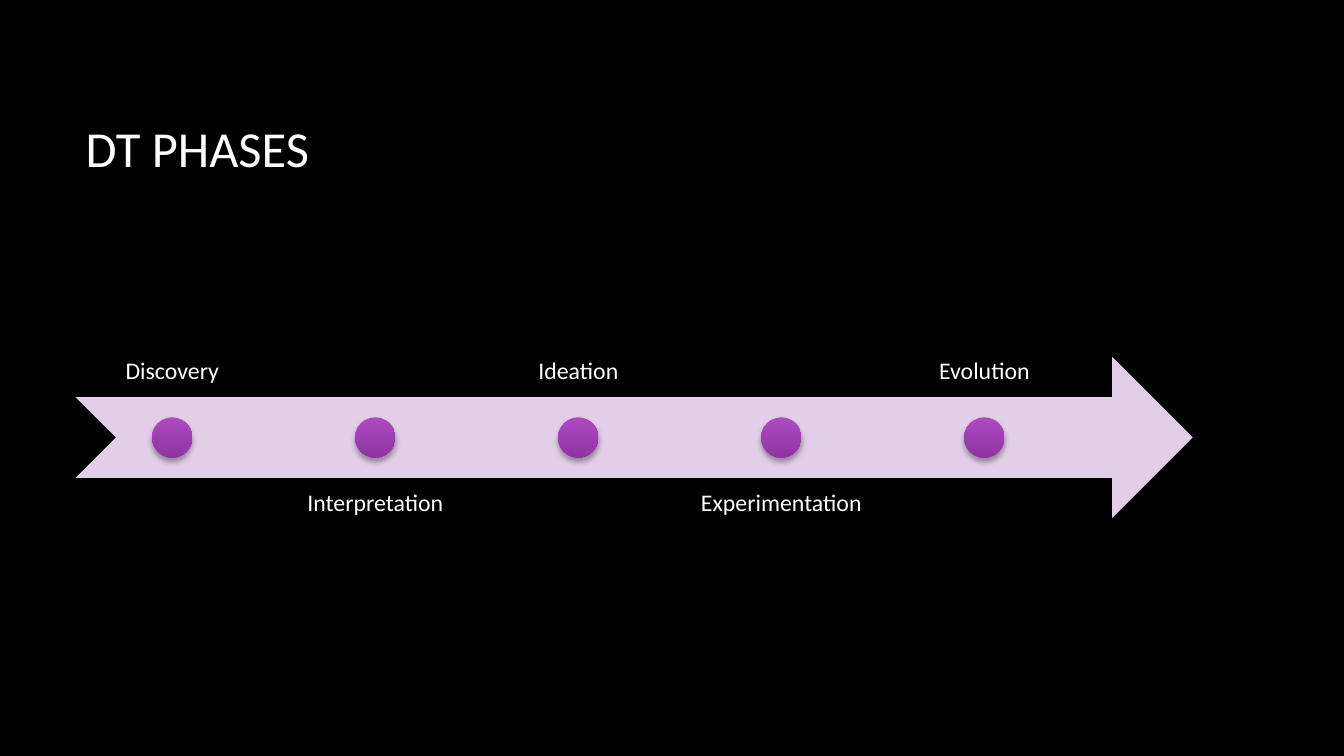
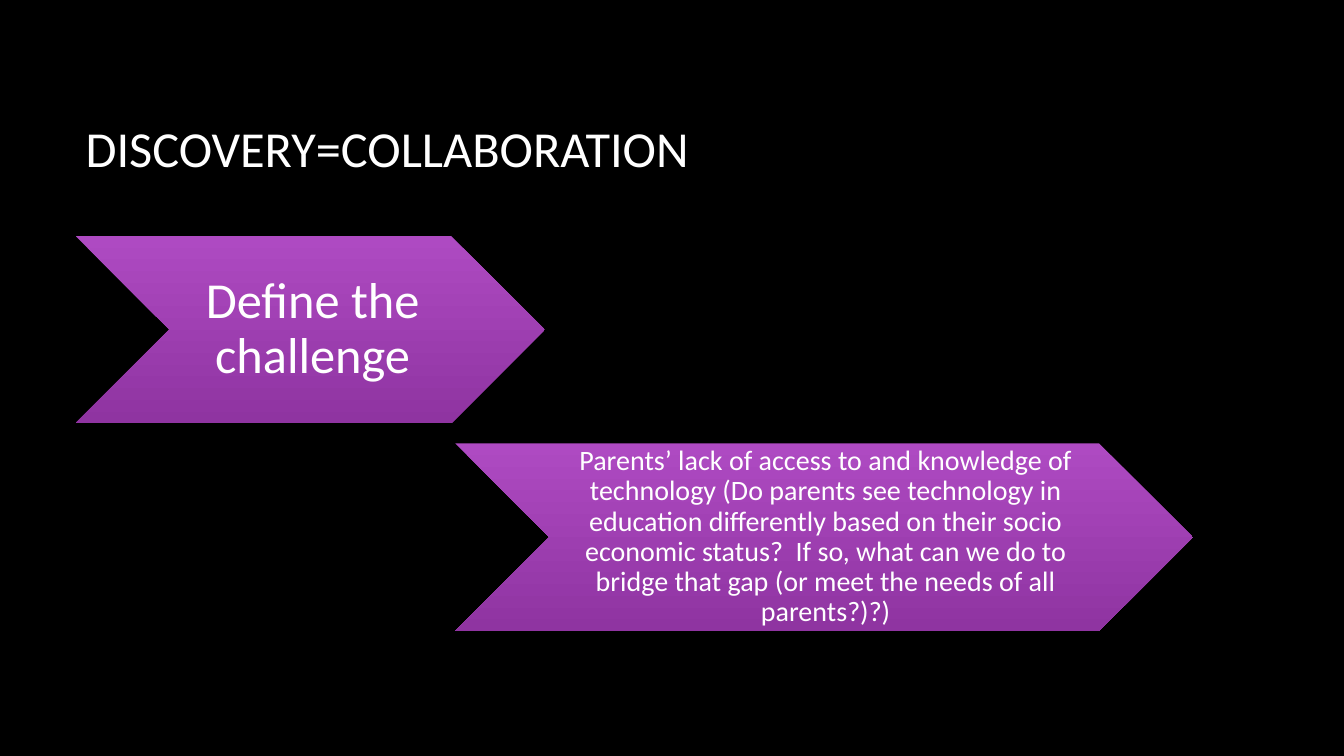
from lxml import etree
from pptx import Presentation
from pptx import util as u
from pptx.dml.color import RGBColor
from pptx.enum import shapes, text
from pptx.oxml import ns

COLOURS = {
    "back": "000000",
    "text": "FFFFFF",
    "arrow": "E3CEE9",
    "top": "AE4AC2",
    "bottom": "8F34A1",
    "shadow": "000000",
}
FONT = "Calibri"
WIDTH, HEIGHT = 13.33, 7.5
TITLE = (0.75, 0.67, 11.08, 1.59)
BODY = (0.75, 2.34, 11.08, 4)
SHADOW = {"blurRad": u.Pt(4), "dist": u.Pt(3), "dir": 90 * 60000, "rotWithShape": 0}

PHASES = ["Discovery", "Interpretation", "Ideation", "Experimentation", "Evolution"]
STEPS = [
    {"text": "Define the challenge", "size": 36, "left": 0, "width": 0.42, "insets": (0.05, 0.03, 0, 0.03)},
    {
        "text": "Parents’ lack of access to and knowledge of technology (Do parents see "
        "technology in education differently based on their socio economic status?  If so, "
        "what can we do to bridge that gap (or meet the needs of all parents?)?)",
        "size": 20, "left": 0.34, "width": 0.66, "insets": (0.03, 0.01, 0, 0.01),
    },
]


def colour(name):
    """Return the named colour."""
    return RGBColor.from_string(COLOURS[name])


def inches(box):
    """Turn a box in inches into lengths."""
    return [u.Inches(value) for value in box]


def within(area, left, top, width, height):
    """Return the box at the given shares of an area."""
    x, y, w, h = area
    return x + left * w, y + top * h, width * w, height * h


def apply(target, values):
    """Set attributes from a dict."""
    for name, value in values.items():
        setattr(target, name, value)


def write(shape, words, size, anchor, insets=(0.1, 0.05, 0.1, 0.05), **layout):
    """Write one paragraph in a shape."""
    frame = shape.text_frame
    sides = ("margin_left", "margin_top", "margin_right", "margin_bottom")
    apply(frame, dict(zip(sides, inches(insets)), word_wrap=True, vertical_anchor=anchor))
    para = frame.paragraphs[0]
    apply(para, layout)
    span = para.add_run()
    span.text = words
    apply(span.font, {"name": FONT, "size": u.Pt(size)})
    span.font.color.rgb = colour("text")


def add_shape(page, kind, box, fill=None):
    """Add a shadowed shape, with the shared gradient unless a fill is named."""
    shape = page.shapes.add_shape(kind, *inches(box))
    shape.line.fill.background()
    if fill:
        shape.fill.solid()
        shape.fill.fore_color.rgb = colour(fill)
    else:
        shape.fill.gradient()
        shape.fill.gradient_angle = 270
        for stop, name in zip(shape.fill.gradient_stops, ("top", "bottom")):
            stop.color.rgb = colour(name)
    shape.shadow.inherit = False
    effects = shape._element.spPr.find(ns.qn("a:effectLst"))
    outer = etree.SubElement(effects, ns.qn("a:outerShdw"))
    for name, value in SHADOW.items():
        outer.set(name, str(value))
    tint = etree.SubElement(outer, ns.qn("a:srgbClr"), val=COLOURS["shadow"])
    etree.SubElement(tint, ns.qn("a:alpha"), val="35000")
    return shape


def add_page(deck, title):
    """Add a blank page with the shared title."""
    page = deck.slides.add_slide(deck.slide_layouts[6])
    box = page.shapes.add_textbox(*inches(TITLE))
    write(box, title, 36, text.MSO_ANCHOR.MIDDLE)
    return page


def add_timeline(page, area, phases):
    """Draw an arrow with evenly spaced dots and labels above and below in turn."""
    add_shape(page, shapes.MSO_SHAPE.NOTCHED_RIGHT_ARROW, within(area, 0, 0.3, 1, 0.4), "arrow")
    gap = 0.05
    width = 0.9 / (len(phases) + gap * (len(phases) - 1))
    for index, phase in enumerate(phases):
        below = index % 2
        column = within(area, index * width * (1 + gap), 0, width, 1)
        label = page.shapes.add_textbox(*inches(within(column, 0, 0.6 * below, 1, 0.4)))
        anchor = text.MSO_ANCHOR.TOP if below else text.MSO_ANCHOR.BOTTOM
        write(label, phase, 17, anchor, (0.13,) * 4,
              alignment=text.PP_ALIGN.CENTER, line_spacing=0.9)
        x, y, w, h = column
        dot = 0.1 * h
        add_shape(page, shapes.MSO_SHAPE.OVAL, (x + (w - dot) / 2, y + (h - dot) / 2, dot, dot))


def add_steps(page, area, steps):
    """Draw one chevron a row, each with its text."""
    for row, step in enumerate(steps):
        box = within(area, step["left"], row * 0.515, step["width"], 0.465)
        chevron = add_shape(page, shapes.MSO_SHAPE.CHEVRON, box)
        write(chevron, step["text"], step["size"], text.MSO_ANCHOR.MIDDLE, step["insets"],
              alignment=text.PP_ALIGN.CENTER, line_spacing=0.9)


def main():
    """Build and save the deck."""
    deck = Presentation()
    apply(deck, {"slide_width": u.Inches(WIDTH), "slide_height": u.Inches(HEIGHT)})
    back = deck.slide_master.background.fill
    back.solid()
    back.fore_color.rgb = colour("back")
    add_timeline(add_page(deck, "DT PHASES"), BODY, PHASES)
    add_steps(add_page(deck, "DISCOVERY=COLLABORATION"), BODY, STEPS)
    deck.save("out.pptx")


if __name__ == "__main__":
    main()
